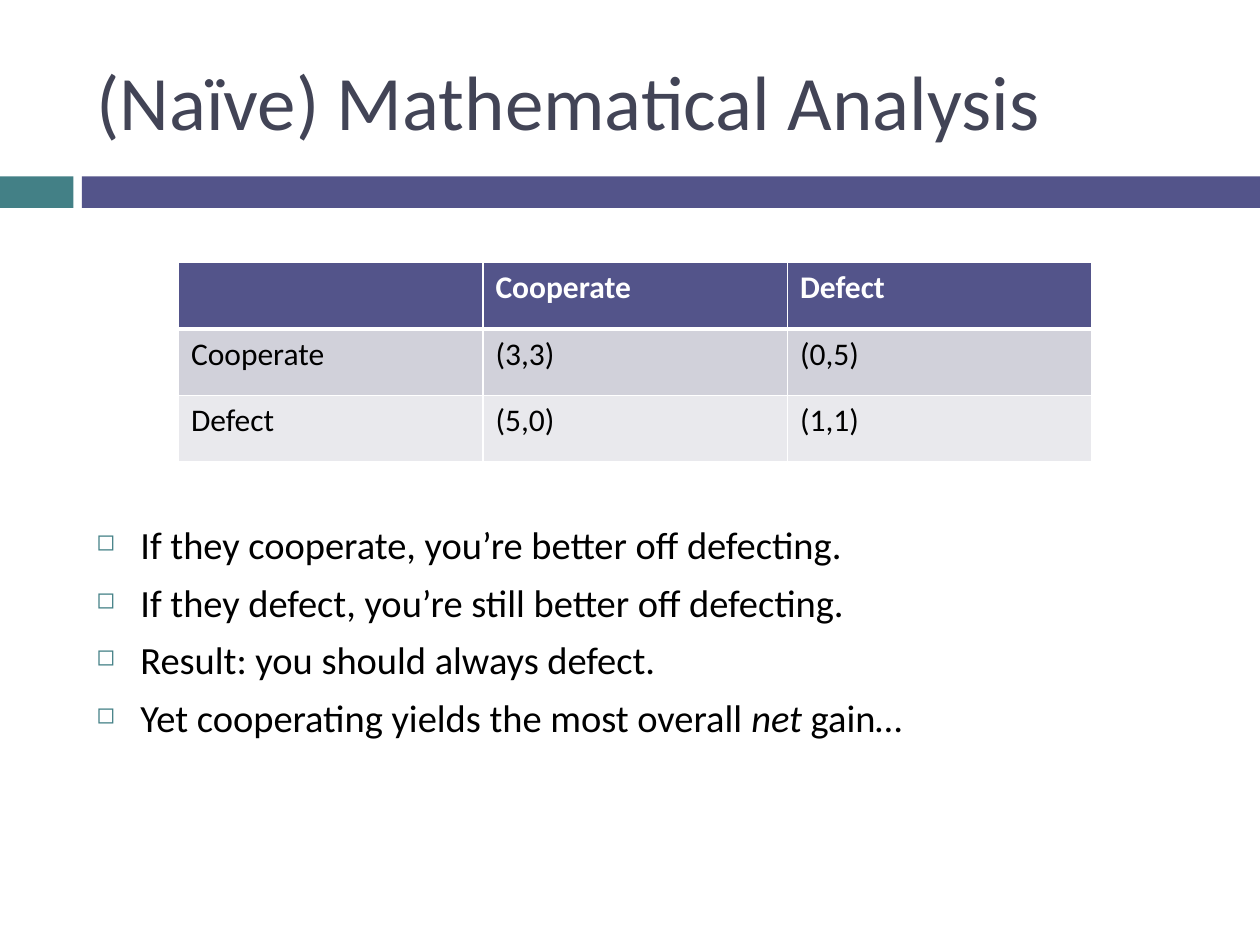
from lxml import etree
from pptx import Presentation
from pptx.dml.color import RGBColor
from pptx.enum import shapes, text
from pptx.oxml.ns import qn
from pptx.util import Pt

INDIGO, TEAL, SLATE = "53548A", "438086", "424456"
BLACK, WHITE = "000000", "FFFFFF"

PAYOFFS = [
    ["", "Cooperate", "Defect"],
    ["Cooperate", "(3,3)", "(0,5)"],
    ["Defect", "(5,0)", "(1,1)"],
]
ROW_FILLS = [INDIGO, "D1D1DA", "E9E9ED"]

# Each point is a list of (words, italic)
POINTS = [
    [("If they cooperate, you’re better off defecting.", False)],
    [("If they defect, you’re still better off defecting.", False)],
    [("Result: you should always defect.", False)],
    [("Yet cooperating yields the most overall ", False), ("net", True), (" gain…", False)],
]


def color(hex_value):
    return RGBColor.from_string(hex_value)


def paint(target, hex_value):
    target.fill.solid()
    target.fill.fore_color.rgb = color(hex_value)


def write(paragraph, words, hex_value, **font_format):
    run = paragraph.add_run()
    run.text = words
    run.font.color.rgb = color(hex_value)
    for key, value in {"name": "Calibri", **font_format}.items():
        setattr(run.font, key, value)


def add_frame(slide, box, anchor):
    frame = slide.shapes.add_textbox(*map(Pt, box)).text_frame
    for key, value in {"word_wrap": True, "vertical_anchor": anchor}.items():
        setattr(frame, key, value)
    return frame


def add_band(slide, box, split, gap):
    """Teal block, a gap, then the indigo bar to the right edge."""
    left, top, width, height = box
    bar_left = left + split + gap
    for x, w, fill in [(left, split, TEAL), (bar_left, left + width - bar_left, INDIGO)]:
        block = slide.shapes.add_shape(
            shapes.MSO_SHAPE.RECTANGLE, Pt(x), Pt(top), Pt(w), Pt(height))
        block.shadow.inherit = False
        paint(block, fill)
        block.line.fill.background()


def add_title(slide, box):
    frame = add_frame(slide, box, text.MSO_ANCHOR.MIDDLE)
    write(frame.paragraphs[0], "(Naïve) Mathematical Analysis", SLATE, size=Pt(44))


def add_borders(cell, widths):
    properties = cell._tc.get_or_add_tcPr()
    for index, (side, width) in enumerate(widths.items()):
        line = etree.Element(qn(f"a:ln{side}"), w=str(Pt(width)))
        fill = etree.SubElement(line, qn("a:solidFill"))
        etree.SubElement(fill, qn("a:srgbClr"), val=WHITE)
        properties.insert(index, line)


def add_payoffs(slide, box):
    table = slide.shapes.add_table(len(PAYOFFS), len(PAYOFFS[0]), *map(Pt, box)).table
    for r, (row, fill) in enumerate(zip(PAYOFFS, ROW_FILLS)):
        header = r == 0
        for c, words in enumerate(row):
            cell = table.cell(r, c)
            paint(cell, fill)
            add_borders(cell, {"L": 1, "R": 1, "T": 3 if r == 1 else 1,
                               "B": 3 if header else 1})
            if words:
                write(cell.text_frame.paragraphs[0], words,
                      WHITE if header else BLACK, size=Pt(18), bold=header)


def add_bullet(paragraph, indent):
    properties = paragraph._p.get_or_add_pPr()
    properties.set("marL", str(Pt(indent)))
    properties.set("indent", str(-Pt(indent)))
    bullet_color = etree.SubElement(properties, qn("a:buClr"))
    etree.SubElement(bullet_color, qn("a:srgbClr"), val=TEAL)
    etree.SubElement(properties, qn("a:buSzPct"), val="60000")
    etree.SubElement(properties, qn("a:buChar"), char="◻")


def add_points(slide, box):
    frame = add_frame(slide, box, text.MSO_ANCHOR.TOP)
    for index, point in enumerate(POINTS):
        paragraph = frame.add_paragraph() if index else frame.paragraphs[0]
        if index:
            paragraph.space_before = Pt(6.5)
        add_bullet(paragraph, 25.2)
        for words, italic in point:
            write(paragraph, words, BLACK, size=Pt(22), italic=italic)


def main():
    deck = Presentation()
    deck.slide_width, deck.slide_height = Pt(720), Pt(540)
    slide = deck.slides.add_slide(deck.slide_layouts[6])

    add_band(slide, (0, 100.8, 720, 18), split=42, gap=4.8)
    add_title(slide, (48, 18, 642, 78))
    add_points(slide, (48, 294.4, 642, 185.6))
    add_payoffs(slide, (102, 150, 522, 114))

    deck.save("out.pptx")


if __name__ == "__main__":
    main()
